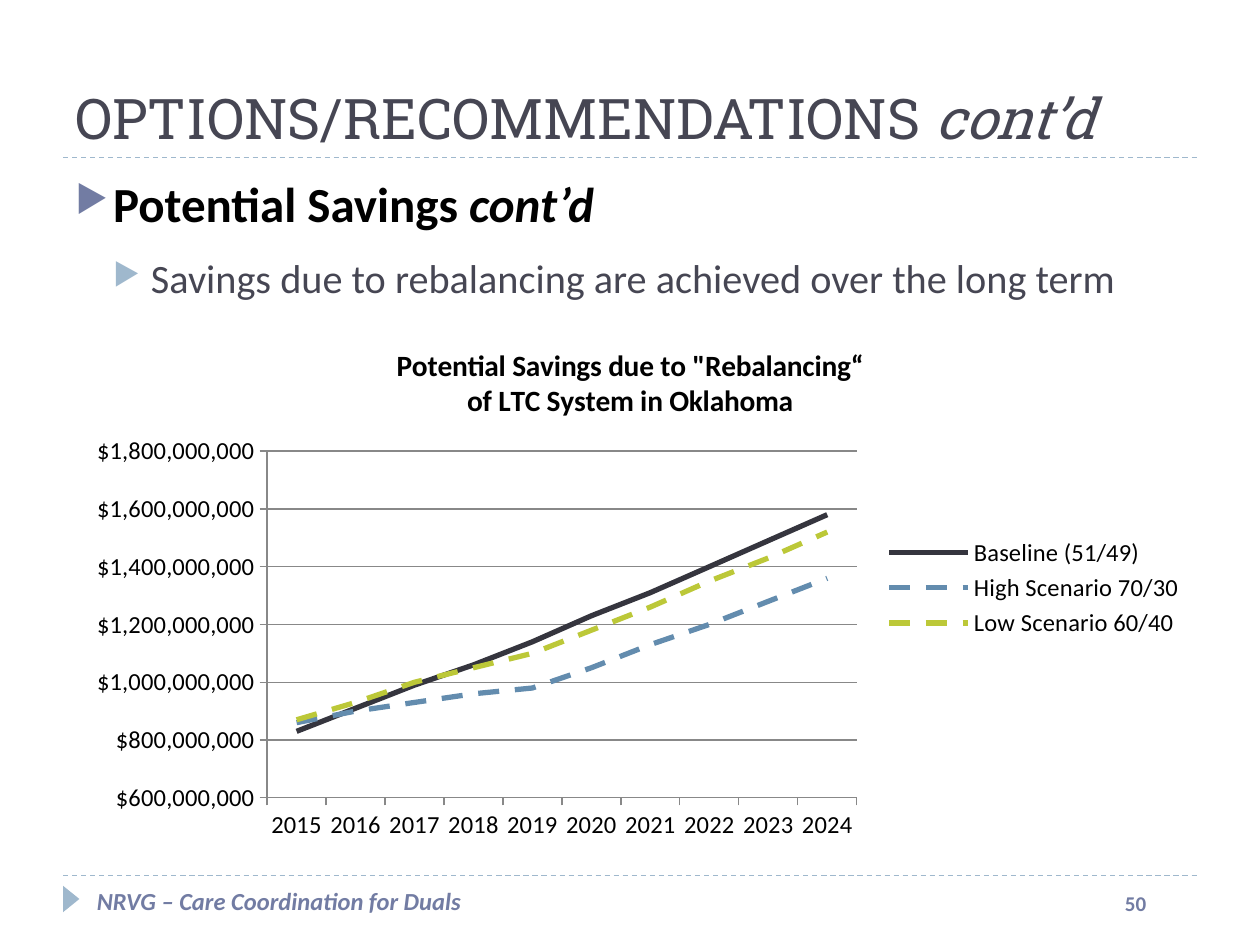
from lxml import etree
from pptx import Presentation, util as u
from pptx.chart.data import CategoryChartData
from pptx.dml.color import RGBColor
from pptx.enum import chart as ch, dml, shapes, text
from pptx.oxml import parse_xml
from pptx.oxml.ns import nsdecls, qn

deck = Presentation()
deck.slide_width, deck.slide_height = u.Inches(10), u.Inches(7.5)
page = deck.slides.add_slide(deck.slide_layouts[5])
LEFT, WIDTH = 0.5, 9
INK, ACCENT, PALE, GRID = "464653", "727CA3", "9FB8CD", "888888"


def color(value):
    return RGBColor.from_string(value)


def write(para, words, size, ink, face="Calibri", bold=False, italic=False):
    span = para.add_run()
    span.text = words
    font = span.font
    font.size, font.name, font.bold, font.italic = u.Pt(size), face, bold, italic
    font.color.rgb = color(ink)


for y in (1.25, 6.95):
    rule = page.shapes.add_connector(
        shapes.MSO_CONNECTOR.STRAIGHT, u.Inches(LEFT), u.Inches(y), u.Inches(LEFT + WIDTH), u.Inches(y))
    rule.line.color.rgb = color(PALE)
    rule.line.width = u.Pt(0.75)
    rule.line.dash_style = dml.MSO_LINE.DASH
    etree.SubElement(rule._element.spPr, qn("a:effectLst"))

marker = page.shapes.add_shape(
    shapes.MSO_SHAPE.ISOSCELES_TRIANGLE, *map(u.Inches, (0.46, 7.07, 0.21, 0.13)))
marker.rotation = 90
marker.shadow.inherit = False
marker.fill.solid()
marker.fill.fore_color.rgb = color(PALE)
marker.line.fill.background()

title = page.shapes.title
title.left, title.top, title.width, title.height = map(u.Inches, (LEFT, 0.17, WIDTH, 1.08))
title.text_frame.vertical_anchor = text.MSO_ANCHOR.BOTTOM
heading = title.text_frame.paragraphs[0]
heading.alignment = text.PP_ALIGN.LEFT
write(heading, "OPTIONS/RECOMMENDATIONS ", 32, INK, face="Roboto Slab")
write(heading, "cont’d", 32, INK, face="Roboto Slab", italic=True)

frames = []
for area in ((8.83, 7.02, 0.58, 0.4), (0.67, 6.98, 4.5, 0.52), (LEFT, 1.33, WIDTH, 1.25)):
    box = page.shapes.add_textbox(*map(u.Inches, area))
    box.text_frame.word_wrap = True
    frames.append(box.text_frame)
number, footer, body = frames
write(number.paragraphs[0], "50", 12, ACCENT, bold=True)
write(footer.paragraphs[0], "NRVG – Care Coordination for Duals", 14, ACCENT, bold=True, italic=True)

topic = body.paragraphs[0]
write(topic, "Potential Savings", 28, "000000", bold=True)
write(topic, " cont’d", 28, "000000", bold=True, italic=True)
detail = body.add_paragraph()
write(detail, "Savings due to rebalancing are achieved over the long term", 23, INK)
for level, (para, tint) in enumerate(((topic, ACCENT), (detail, PALE))):
    para.level = level
    para.space_before = u.Pt(12)
    props = para._p.get_or_add_pPr()
    props.set("marL", str(u.Inches(0.3 * (level + 1))))
    props.set("indent", str(u.Inches(-0.3)))
    bullet_color = etree.SubElement(props, qn("a:buClr"))
    etree.SubElement(bullet_color, qn("a:srgbClr"), val=tint)
    etree.SubElement(props, qn("a:buSzPct"), val="76000")
    etree.SubElement(props, qn("a:buChar"), char="▶")

savings = CategoryChartData(number_format='"$"#,##0')
savings.categories = [str(year) for year in range(2015, 2025)]
scenarios = (
    ("Baseline (51/49)", "35353E", dml.MSO_LINE.SOLID,
     (830, 910, 990, 1060, 1140, 1230, 1310, 1400, 1490, 1580)),
    ("High Scenario 70/30", "638CAE", dml.MSO_LINE.DASH,
     (860, 900, 930, 960, 980, 1050, 1130, 1200, 1280, 1360)),
    ("Low Scenario 60/40", "BCC838", dml.MSO_LINE.DASH,
     (870, 930, 1000, 1050, 1100, 1180, 1260, 1350, 1430, 1520)),
)
for name, tint, dash, millions in scenarios:
    savings.add_series(name, [value * 10**6 for value in millions])
chart = page.shapes.add_chart(
    ch.XL_CHART_TYPE.LINE, *map(u.Inches, (LEFT, 2.58, WIDTH, 4.17)), savings).chart
chart.font.size, chart.font.name = u.Pt(14), "Calibri"
chart.font.color.rgb = color("000000")

chart.has_title = True
caption = chart.chart_title.text_frame
write(caption.paragraphs[0], 'Potential Savings due to "Rebalancing“', 16.8, "000000", bold=True)
write(caption.add_paragraph(), "of LTC System in Oklahoma", 16.8, "000000", bold=True)
chart.chart_title.include_in_layout = False

chart.has_legend = True
chart.legend.position = ch.XL_LEGEND_POSITION.RIGHT
chart.legend.include_in_layout = False

amounts, years = chart.value_axis, chart.category_axis
amounts.minimum_scale, amounts.maximum_scale, amounts.major_unit = 6 * 10**8, 18 * 10**8, 2 * 10**8
amounts.tick_labels.number_format = '"$"#,##0'
amounts.tick_labels.number_format_is_linked = False
amounts.has_major_gridlines = True
years.tick_label_position = ch.XL_TICK_LABEL_POSITION.LOW
for axis in (amounts, years):
    axis.major_tick_mark = ch.XL_TICK_MARK.OUTSIDE
for stroke in (amounts.format.line, years.format.line, amounts.major_gridlines.format.line):
    stroke.color.rgb = color(GRID)
    stroke.width = u.Pt(0.75)

plot = chart.plots[0]
plot.vary_by_categories = False
for series, (name, tint, dash, millions) in zip(plot.series, scenarios):
    series.smooth = False
    series.marker.style = ch.XL_MARKER_STYLE.NONE
    series.format.line.color.rgb = color(tint)
    series.format.line.width = u.Pt(3)
    series.format.line.dash_style = dash

area = chart._chartSpace.chart.plotArea
for old in area.findall(qn("c:layout")):
    area.remove(old)
shares = "".join(
    f'<c:{tag} val="{value}"/>' for tag, value in (
        ("layoutTarget", "inner"), ("xMode", "edge"), ("yMode", "edge"),
        ("x", 0.18), ("y", 0.24), ("w", 0.52), ("h", 0.66)))
area.insert(0, parse_xml(
    f'<c:layout {nsdecls("c")}><c:manualLayout>{shares}</c:manualLayout></c:layout>'))

deck.save("out.pptx")
